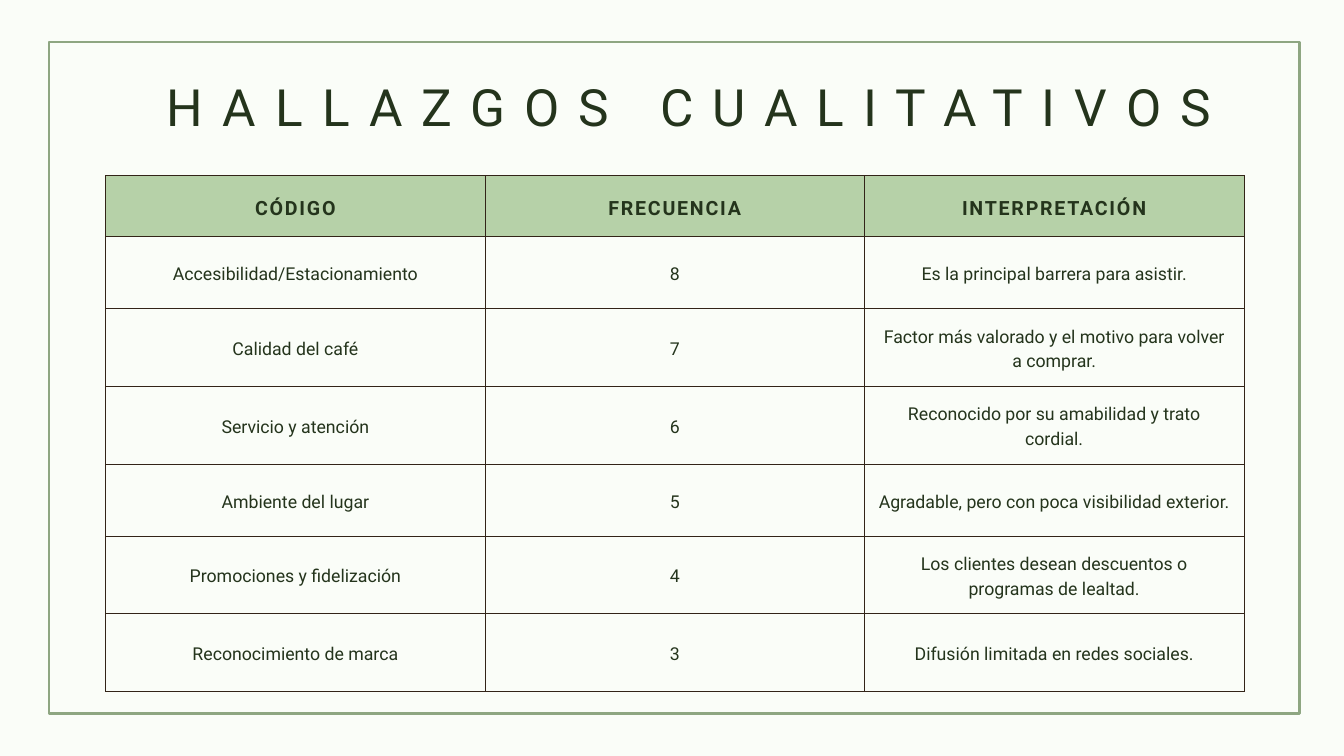
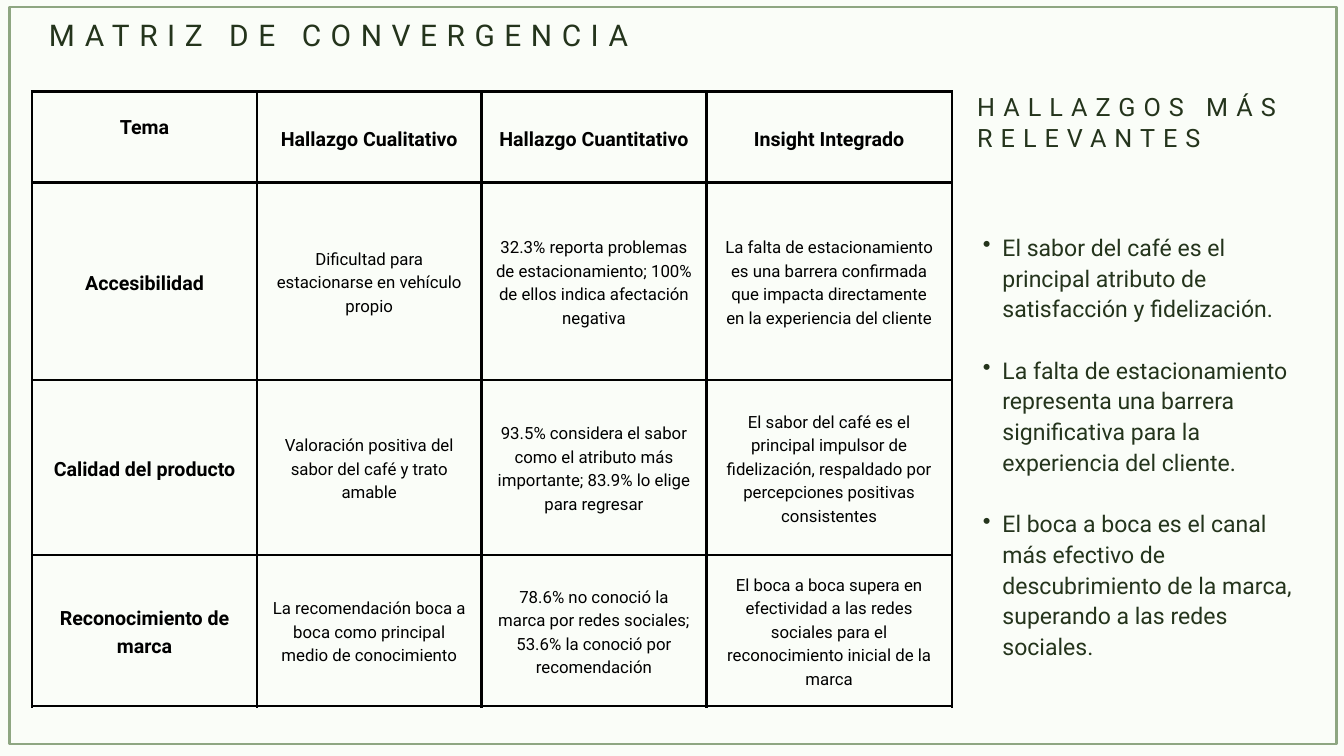
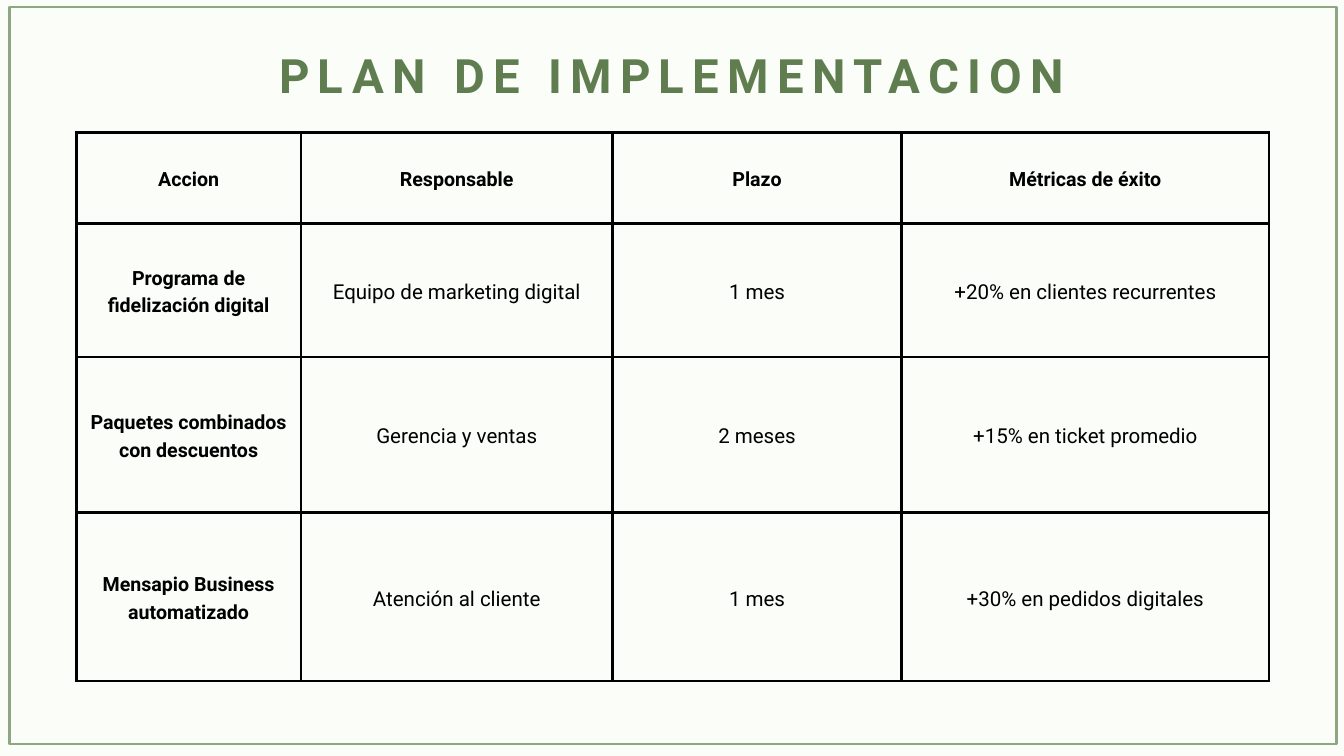
import dataclasses
import typing

import lxml.etree
import pptx
import pptx.dml.color
import pptx.enum.shapes
import pptx.enum.text
import pptx.oxml.ns
import pptx.presentation
import pptx.slide
import pptx.table
import pptx.text.text
import pptx.util

EMU_PER_PX = 9525
SLIDE_SIZE = (1920, 1080)
FONT = "Roboto"
CELL_INSET = 20
TITLE_ONLY = 5

COLORS = {
    "paper": "FAFDF8",
    "frame": "8EA682",
    "forest": "24341C",
    "moss": "5F7D4F",
    "sage": "B6D1A8",
    "bark": "322418",
    "black": "000000",
}

CENTER = pptx.enum.text.PP_ALIGN.CENTER
LEFT = pptx.enum.text.PP_ALIGN.LEFT
MIDDLE = pptx.enum.text.MSO_ANCHOR.MIDDLE

FRAME_TEXT = {
    "margin_left": 0,
    "margin_top": 0,
    "margin_right": 0,
    "margin_bottom": 0,
    "word_wrap": True,
    "vertical_anchor": pptx.enum.text.MSO_ANCHOR.TOP,
    "auto_size": pptx.enum.text.MSO_AUTO_SIZE.SHAPE_TO_FIT_TEXT,
}


class Box(typing.NamedTuple):
    left: int
    top: int
    width: int
    height: int


@dataclasses.dataclass(frozen=True)
class TextStyle:
    size: float
    leading: float
    color: str = "forest"
    bold: bool = False
    tracking: float = 0
    align: pptx.enum.text.PP_ALIGN = CENTER


@dataclasses.dataclass(frozen=True)
class Heading:
    text: str
    box: Box
    style: TextStyle


@dataclasses.dataclass(frozen=True)
class Grid:
    left: int
    top: int
    columns: tuple[int, ...]
    heights: tuple[int, ...]
    rows: tuple[tuple[str, ...], ...]
    header: TextStyle
    label: TextStyle
    body: TextStyle
    border: str = "black"
    border_pt: float = 3
    header_fill: str | None = None
    body_fill: str | None = None


WIDE_FRAME = Box(14, 10, 1895, 1053)
BOLD_CELL = TextStyle(21, 29.4, "black", bold=True)
FINDING_CELL = TextStyle(19, 26.6)

FINDINGS_TITLE = Heading(
    "HALLAZGOS CUALITATIVOS", Box(151, 108, 1668, 87), TextStyle(55, 66, tracking=20.4)
)
FINDINGS = Grid(
    151, 251, (542,) * 3, (87, 103, 110, 103, 103, 111, 111),
    (
        ("CÓDIGO", "FRECUENCIA", "INTERPRETACIÓN"),
        ("Accesibilidad/Estacionamiento", "8", "Es la principal barrera para asistir."),
        ("Calidad del café", "7", "Factor más valorado y el motivo para volver a comprar."),
        ("Servicio y atención", "6", "Reconocido por su amabilidad y trato cordial."),
        ("Ambiente del lugar", "5", "Agradable, pero con poca visibilidad exterior."),
        ("Promociones y fidelización", "4",
         "Los clientes desean descuentos o programas de lealtad."),
        ("Reconocimiento de marca", "3", "Difusión limitada en redes sociales."),
    ),
    header=TextStyle(21, 29.4, bold=True, tracking=1.9),
    label=FINDING_CELL, body=FINDING_CELL,
    border="bark", border_pt=0.75, header_fill="sage", body_fill="paper",
)

MATRIX_TITLE = Heading(
    "MATRIZ DE CONVERGENCIA", Box(70, 24, 1050, 51),
    TextStyle(32, 38.4, tracking=10.2, align=LEFT),
)
MATRIX = Grid(
    46, 131, (321, 321, 321, 351), (130, 282, 250, 216),
    (
        ("Tema", "Hallazgo Cualitativo", "Hallazgo Cuantitativo", "Insight Integrado"),
        ("Accesibilidad",
         "Dificultad para estacionarse en vehículo propio",
         "32.3% reporta problemas de estacionamiento; 100% de ellos indica afectación negativa",
         "La falta de estacionamiento es una barrera confirmada que impacta directamente "
         "en la experiencia del cliente"),
        ("Calidad del producto",
         "Valoración positiva del sabor del café y trato amable",
         "93.5% considera el sabor como el atributo más importante; 83.9% lo elige para regresar",
         "El sabor del café es el principal impulsor de fidelización, respaldado por "
         "percepciones positivas consistentes"),
        ("Reconocimiento de marca",
         "La recomendación boca a boca como principal medio de conocimiento",
         "78.6% no conoció la marca por redes sociales; 53.6% la conoció por recomendación",
         "El boca a boca supera en efectividad a las redes sociales para el "
         "reconocimiento inicial de la marca"),
    ),
    header=BOLD_CELL, label=BOLD_CELL, body=TextStyle(18, 25.2, "black"),
)
TOPIC_BOTTOM_INSET = 54
HIGHLIGHTS_HEADING = Heading(
    "HALLAZGOS MÁS RELEVANTES", Box(1396, 131, 498, 86),
    TextStyle(27, 32.4, tracking=8.6, align=LEFT),
)
HIGHLIGHTS_BOX = Box(1376, 329, 504, 602)
HIGHLIGHTS_STYLE = TextStyle(24.7, 32.9, align=LEFT)
HIGHLIGHTS_INDENT = 28
HIGHLIGHTS = (
    "El sabor del café es el principal atributo de satisfacción y fidelización.",
    "La falta de estacionamiento representa una barrera significativa para la "
    "experiencia del cliente.",
    "El boca a boca es el canal más efectivo de descubrimiento de la marca, "
    "superando a las redes sociales.",
)

PLAN_TITLE = Heading(
    "PLAN DE IMPLEMENTACION", Box(241, 77, 1438, 71),
    TextStyle(50.7, 52.2, "moss", bold=True, tracking=8.9),
)
PLAN = Grid(
    109, 189, (321, 445, 413, 525), (130, 191, 222, 241),
    (
        ("Accion", "Responsable", "Plazo", "Métricas de éxito"),
        ("Programa de fidelización digital", "Equipo de marketing digital", "1 mes",
         "+20% en clientes recurrentes"),
        ("Paquetes combinados con descuentos", "Gerencia y ventas", "2 meses",
         "+15% en ticket promedio"),
        ("Mensapio Business automatizado", "Atención al cliente", "1 mes",
         "+30% en pedidos digitales"),
    ),
    header=BOLD_CELL, label=BOLD_CELL, body=TextStyle(22, 30.8, "black"),
)


def px(length: int) -> pptx.util.Emu:
    return pptx.util.Emu(length * EMU_PER_PX)


def emu(box: Box) -> tuple[pptx.util.Emu, ...]:
    return tuple(px(length) for length in box)


def rgb(name: str) -> pptx.dml.color.RGBColor:
    return pptx.dml.color.RGBColor.from_string(COLORS[name])


def apply(target: typing.Any, values: dict[str, typing.Any]) -> None:
    for attribute, value in values.items():
        setattr(target, attribute, value)


def write(paragraph: pptx.text.text._Paragraph, text: str, style: TextStyle) -> None:
    apply(paragraph, {"alignment": style.align, "line_spacing": pptx.util.Pt(style.leading)})
    run = paragraph.add_run()
    run.text = text
    apply(run.font, {"name": FONT, "size": pptx.util.Pt(style.size), "bold": style.bold})
    run.font.color.rgb = rgb(style.color)
    if style.tracking:
        run.font._element.set("spc", str(round(style.tracking * 100)))


def add_page(deck: pptx.presentation.Presentation, frame: Box, title: Heading) -> pptx.slide.Slide:
    slide = deck.slides.add_slide(deck.slide_layouts[TITLE_ONLY])
    border = slide.shapes.add_shape(pptx.enum.shapes.MSO_SHAPE.RECTANGLE, *emu(frame))
    border.shadow.inherit = False
    border.fill.background()
    border.line.color.rgb = rgb("frame")
    border.line.width = pptx.util.Pt(3)
    heading = slide.shapes.title
    apply(heading, dict(zip(Box._fields, emu(title.box))))
    apply(heading.text_frame, FRAME_TEXT)
    write(heading.text_frame.paragraphs[0], title.text, title.style)
    return slide


def add_text_frame(slide: pptx.slide.Slide, box: Box) -> pptx.text.text.TextFrame:
    frame = slide.shapes.add_textbox(*emu(box)).text_frame
    apply(frame, FRAME_TEXT)
    return frame


def add_borders(cell: pptx.table._Cell, color: str, width: float) -> None:
    properties = cell._tc.get_or_add_tcPr()
    for position, side in enumerate(("lnL", "lnR", "lnT", "lnB")):
        line = lxml.etree.Element(
            pptx.oxml.ns.qn(f"a:{side}"), w=str(int(pptx.util.Pt(width)))
        )
        fill = lxml.etree.SubElement(line, pptx.oxml.ns.qn("a:solidFill"))
        lxml.etree.SubElement(fill, pptx.oxml.ns.qn("a:srgbClr"), val=COLORS[color])
        properties.insert(position, line)


def format_cell(cell: pptx.table._Cell, fill: str | None) -> None:
    sides = ("left", "top", "right", "bottom")
    apply(cell, {f"margin_{side}": px(CELL_INSET) for side in sides})
    cell.vertical_anchor = MIDDLE
    if fill:
        cell.fill.solid()
        cell.fill.fore_color.rgb = rgb(fill)
    else:
        cell.fill.background()


def add_grid(slide: pptx.slide.Slide, grid: Grid) -> pptx.table.Table:
    box = Box(grid.left, grid.top, sum(grid.columns), sum(grid.heights))
    table = slide.shapes.add_table(len(grid.rows), len(grid.columns), *emu(box)).table
    apply(table, {"first_row": False, "horz_banding": False})
    for column, width in zip(table.columns, grid.columns):
        column.width = px(width)
    for row, height in zip(table.rows, grid.heights):
        row.height = px(height)
    for r, texts in enumerate(grid.rows):
        for c, text in enumerate(texts):
            cell = table.cell(r, c)
            style = grid.header if r == 0 else grid.label if c == 0 else grid.body
            format_cell(cell, grid.body_fill if r else grid.header_fill)
            add_borders(cell, grid.border, grid.border_pt)
            write(cell.text_frame.paragraphs[0], text, style)
    return table


def add_highlights(slide: pptx.slide.Slide) -> None:
    frame = add_text_frame(slide, HIGHLIGHTS_BOX)
    for index, highlight in enumerate(HIGHLIGHTS):
        paragraph = frame.add_paragraph() if index else frame.paragraphs[0]
        write(paragraph, highlight, HIGHLIGHTS_STYLE)
        paragraph.space_before = pptx.util.Pt(HIGHLIGHTS_STYLE.leading if index else 0)
        properties = paragraph._p.get_or_add_pPr()
        properties.set("marL", str(px(2 * HIGHLIGHTS_INDENT)))
        properties.set("indent", str(px(-HIGHLIGHTS_INDENT)))
        lxml.etree.SubElement(properties, pptx.oxml.ns.qn("a:buChar"), char="•")


def main() -> None:
    deck = pptx.Presentation()
    deck.slide_width, deck.slide_height = (px(length) for length in SLIDE_SIZE)
    backdrop = deck.slide_master.background.fill
    backdrop.solid()
    backdrop.fore_color.rgb = rgb("paper")

    findings = add_page(deck, Box(70, 60, 1786, 959), FINDINGS_TITLE)
    add_grid(findings, FINDINGS)

    matrix = add_page(deck, WIDE_FRAME, MATRIX_TITLE)
    topics = add_grid(matrix, MATRIX)
    topics.cell(0, 0).margin_bottom = px(TOPIC_BOTTOM_INSET)
    side_heading = add_text_frame(matrix, HIGHLIGHTS_HEADING.box)
    write(side_heading.paragraphs[0], HIGHLIGHTS_HEADING.text, HIGHLIGHTS_HEADING.style)
    add_highlights(matrix)

    plan = add_page(deck, WIDE_FRAME, PLAN_TITLE)
    add_grid(plan, PLAN)

    deck.save("out.pptx")


if __name__ == "__main__":
    main()
